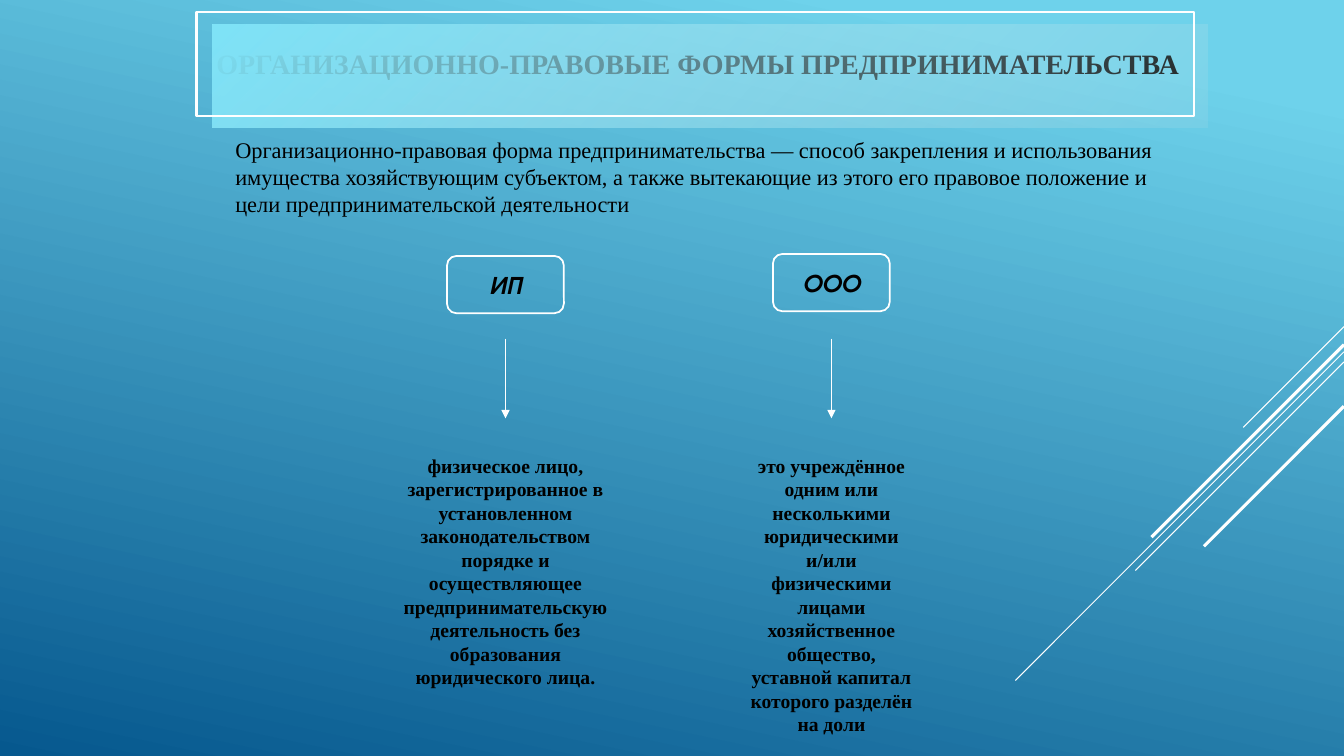
import pptx
import pptx.util
import pptx.dml.color
import pptx.enum.shapes
import pptx.enum.text
import pptx.oxml.ns
import lxml.etree

Pt = pptx.util.Pt
SHAPE = pptx.enum.shapes.MSO_SHAPE
ALIGN = pptx.enum.text.PP_ALIGN
ANCHOR = pptx.enum.text.MSO_ANCHOR
COLORS = {"sky": "6ED2EB", "sea": "06588E", "aqua": "80E4F8", "mist": "C0E2E9",
          "line": "FFFFFF", "ink": "000000"}
SERIF = "Times New Roman"
SANS = "TeX Gyre Adventor"
TITLE = "ОРГАНИЗАЦИОННО-ПРАВОВЫЕ ФОРМЫ ПРЕДПРИНИМАТЕЛЬСТВА"
INTRO = ("Организационно-правовая форма предпринимательства — способ закрепления "
         "и использования имущества хозяйствующим субъектом, а также вытекающие "
         "из этого его правовое положение и цели предпринимательской деятельности")
SOLE = ("физическое лицо, зарегистрированное в установленном законодательством порядке "
        "и осуществляющее предпринимательскую деятельность без образования "
        "юридического лица.")
FIRM = ("это учреждённое одним или несколькими юридическими и/или физическими лицами "
        "хозяйственное общество, уставной капитал которого разделён на доли")
RAYS = [(233.3, 72, 0.75), (251.3, 234.7, 0.75), (258.5, 149, 0.75),
        (246.2, 137.5, 2.25), (290.2, 100, 2.25)]


def rgb(name):
    """Return a named colour."""
    return pptx.dml.color.RGBColor.from_string(COLORS[name])


def child(node, tag, **attrs):
    """Append a drawing element to a node."""
    return lxml.etree.SubElement(node, pptx.oxml.ns.qn(tag), **attrs)


def blend(fill, angle, stops):
    """Fill with a two-stop gradient, angle clockwise."""
    fill.gradient()
    fill.gradient_angle = 360 - angle
    for stop, (pos, name) in zip(fill.gradient_stops, stops):
        stop.position = pos
        stop.color.rgb = rgb(name)


def write(shape, text, size=14, font=SERIF, bold=False, italic=False,
          align=ALIGN.CENTER, anchor=ANCHOR.TOP):
    """Put formatted text into a shape."""
    frame = shape.text_frame
    frame.word_wrap = True
    frame.auto_size = pptx.enum.text.MSO_AUTO_SIZE.NONE
    frame.vertical_anchor = anchor
    para = frame.paragraphs[0]
    para.alignment = align
    run = para.add_run()
    run.text = text
    face = run.font
    face.size, face.name, face.bold, face.italic = Pt(size), font, bold, italic
    face.color.rgb = rgb("ink")


def place(shapes, kind, x, y, w, h, edge=None):
    """Add an unfilled shape with an optional outline."""
    shape = shapes.add_shape(kind, Pt(x), Pt(y), Pt(w), Pt(h))
    shape.shadow.inherit = False
    shape.fill.background()
    if edge:
        shape.line.color.rgb = rgb("line")
        shape.line.width = Pt(edge)
    else:
        shape.line.fill.background()
    return shape


def stroke(shapes, x, y, x2, y2, width=0.75, arrow=False):
    """Draw a straight line, with an arrowhead if asked."""
    line = shapes.add_connector(pptx.enum.shapes.MSO_CONNECTOR.STRAIGHT,
                                Pt(x), Pt(y), Pt(x2), Pt(y2))
    line.line.color.rgb = rgb("line")
    line.line.width = Pt(width)
    if arrow:
        child(line.line._get_or_add_ln(), "a:tailEnd", type="triangle")
    child(line._element.spPr, "a:effectLst")


def rays(shapes, right):
    """Draw the diagonal lines from the right edge."""
    for y, span, width in RAYS:
        stroke(shapes, right, y, right - span, y + span, width)


def banner(shapes, x, y, w, h):
    """Build the title band with its offset frame."""
    band = place(shapes, SHAPE.RECTANGLE, x + 11.5, y + 8.6, w - 2.2, h)
    blend(band.fill, 45, [(0, "aqua"), (1, "mist")])
    tint = band._element.spPr.findall(".//" + pptx.oxml.ns.qn("a:srgbClr"))[1]
    child(tint, "a:alpha", val="15000")
    title = shapes.title
    title.left, title.top = Pt(x - 20), Pt(y + 26)
    title.width, title.height = Pt(w + 43.2), Pt(21)
    write(title, TITLE, size=20, bold=True, anchor=ANCHOR.MIDDLE)
    place(shapes, SHAPE.RECTANGLE, x, y, w, h, edge=1.5)


def note(shapes, text, x, y, w, h, **style):
    """Add a text box."""
    write(shapes.add_textbox(Pt(x), Pt(y), Pt(w), Pt(h)), text, **style)


def column(shapes, name, text, x, y, w, h, drop=0):
    """Build a form of business: tag, arrow and meaning."""
    mid = x + w / 2
    tag = place(shapes, SHAPE.ROUNDED_RECTANGLE, mid - 41.8, y + drop, 83.5, 41, edge=1.25)
    write(tag, name, size=18, font=SANS, bold=True, italic=True, anchor=ANCHOR.MIDDLE)
    stroke(shapes, mid, y + 60.5, mid, y + 117.4, arrow=True)
    note(shapes, text, x, y + 139, w, h - 139, bold=True)


def main():
    """Build and save the slide."""
    deck = pptx.Presentation()
    deck.slide_width, deck.slide_height = Pt(960), Pt(540)
    slide = deck.slides.add_slide(deck.slide_layouts[5])
    blend(slide.background.fill, 102, [(0.1, "sky"), (1, "sea")])
    shapes = slide.shapes
    rays(shapes, 960)
    banner(shapes, 140.4, 8.6, 712.8, 74.2)
    note(shapes, INTRO, 161, 93.6, 669.6, 65.5, size=16, align=ALIGN.LEFT)
    column(shapes, "ИП", SOLE, 277.2, 181.4, 167.8, 316, drop=1.4)
    column(shapes, "ООО", FIRM, 526.2, 181.4, 135.4, 350)
    deck.save("out.pptx")


if __name__ == "__main__":
    main()
